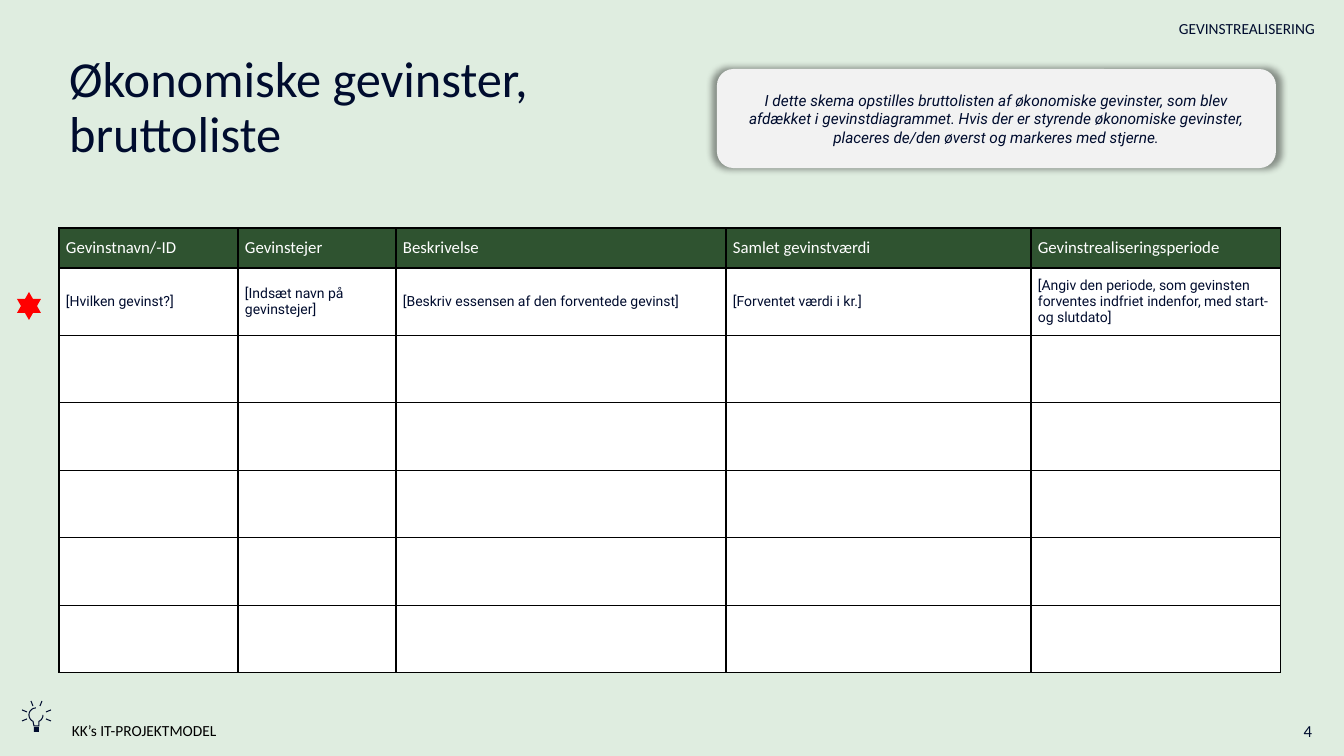
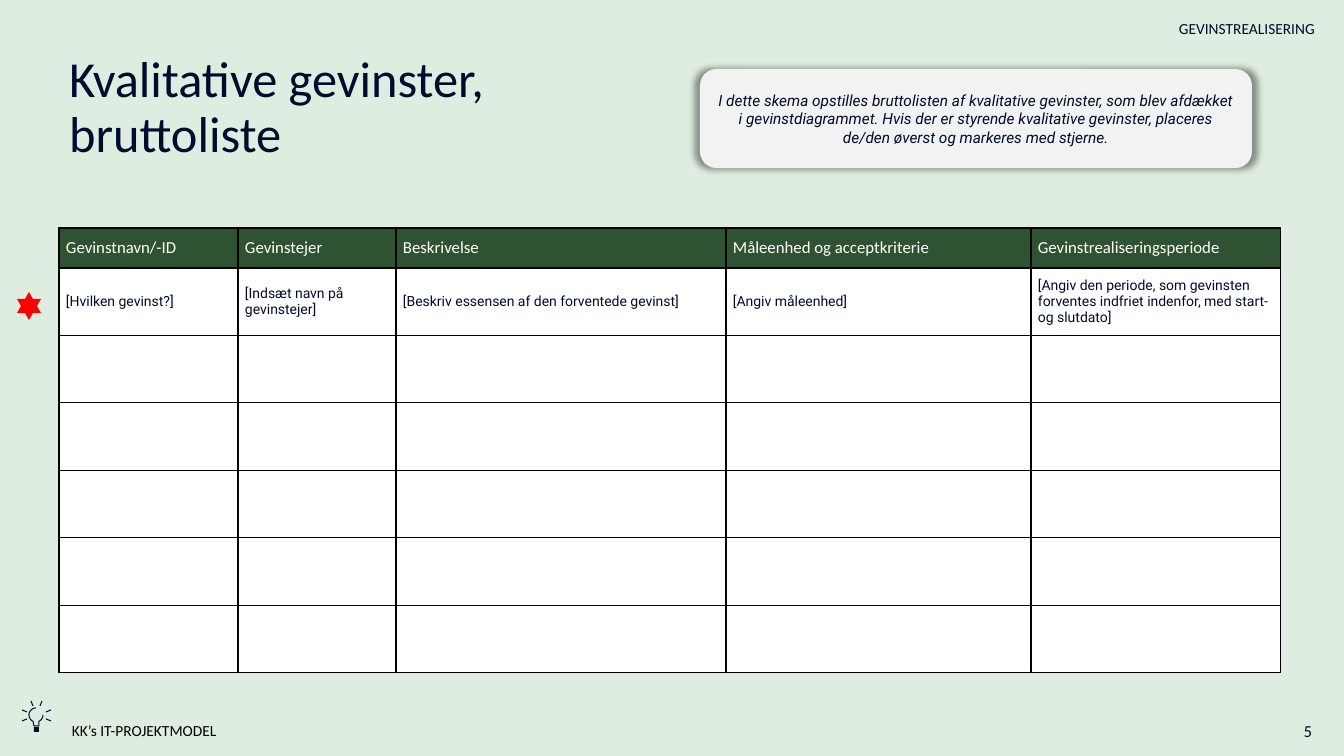
from math import cos, radians, sin

from lxml.etree import SubElement
from pptx import Presentation
from pptx.dml.color import RGBColor
from pptx.enum.shapes import MSO_SHAPE
from pptx.enum.text import MSO_ANCHOR, MSO_AUTO_SIZE, PP_ALIGN
from pptx.oxml import parse_xml
from pptx.oxml.ns import nsdecls, qn
from pptx.util import Pt

SLIDE_WIDTH, SLIDE_HEIGHT = 1344, 756
EMU_PER_PX = 12192000 / SLIDE_WIDTH

MINT = RGBColor(0xDF, 0xED, 0xE0)
NAVY = RGBColor(0x00, 0x0C, 0x2E)
BLACK = RGBColor(0x00, 0x00, 0x00)
WHITE = RGBColor(0xFF, 0xFF, 0xFF)
GREEN = RGBColor(0x2F, 0x53, 0x30)
LIGHT_GREY = RGBColor(0xF2, 0xF2, 0xF2)
RED = RGBColor(0xFF, 0x00, 0x00)
HEADING_FONT, BODY_FONT = "Calibri", "Roboto"

HEADER = "GEVINSTREALISERING"
FOOTER = "KK’s IT-PROJEKTMODEL"
SLIDES = [
    {
        "number": 4,
        "title": "Økonomiske gevinster,\vbruttoliste",
        "guide": "I dette skema opstilles bruttolisten af økonomiske gevinster, som blev "
                 "afdækket i gevinstdiagrammet. Hvis der er styrende økonomiske gevinster, "
                 "placeres de/den øverst og markeres med stjerne.",
        "guide_box": (717, 69, 559, 99),
        "measure": ("Samlet gevinstværdi", "[Forventet værdi i kr.]"),
    },
    {
        "number": 5,
        "title": "Kvalitative gevinster,\vbruttoliste",
        "guide": "I dette skema opstilles bruttolisten af kvalitative gevinster, som blev "
                 "afdækket i gevinstdiagrammet. Hvis der er styrende kvalitative gevinster, "
                 "placeres de/den øverst og markeres med stjerne.",
        "guide_box": (700, 69, 552, 99),
        "measure": ("Måleenhed og acceptkriterie", "[Angiv måleenhed]"),
    },
]
COLUMNS_BEFORE = [
    ("Gevinstnavn/-ID", "[Hvilken gevinst?]"),
    ("Gevinstejer", "[Indsæt navn på gevinstejer]"),
    ("Beskrivelse", "[Beskriv essensen af den forventede gevinst]"),
]
PERIOD_COLUMN = (
    "Gevinstrealiseringsperiode",
    "[Angiv den periode, som gevinsten forventes indfriet indenfor, med start- og slutdato]",
)
TABLE_LEFT, TABLE_TOP, TABLE_HEIGHT = 59, 228, 445
COLUMN_WIDTHS = [179, 158, 330, 305, 250]
HEADING_HEIGHT, BENEFIT_ROWS = 40, 6

BULB_CENTER, BULB_RADIUS = (36, 715), 7
BULB_NECK = [(39, 726), (34, 726)]
BULB_RAYS = [
    [(46, 712), (51, 710)], [(46, 719), (51, 721)],
    [(22, 710), (27, 712)], [(22, 721), (27, 719)],
    [(42, 701), (40, 706)], [(31, 701), (33, 706)],
]


def px(length):
    return round(length * EMU_PER_PX)


def box(*lengths):
    return [px(length) for length in lengths]


def format_text(frame, size, color, font=HEADING_FONT, align=PP_ALIGN.LEFT,
                anchor=MSO_ANCHOR.MIDDLE, italic=False):
    frame.word_wrap = True
    frame.vertical_anchor = anchor
    for paragraph in frame.paragraphs:
        paragraph.alignment = align
        for run in paragraph.runs:
            run.font.size = Pt(size)
            run.font.name = font
            run.font.italic = italic
            run.font.color.rgb = color


def add_label(slide, text, place, size, color, **style):
    frame = slide.shapes.add_textbox(*box(*place)).text_frame
    frame.text = text
    format_text(frame, size, color, **style)


def add_filled_shape(slide, kind, place, color):
    shape = slide.shapes.add_shape(kind, *box(*place))
    shape.shadow.inherit = False
    shape.fill.solid()
    shape.fill.fore_color.rgb = color
    shape.line.fill.background()
    return shape


def arc(start, end, step=5):
    center_x, center_y = BULB_CENTER
    return [(center_x + BULB_RADIUS * cos(radians(angle)),
             center_y + BULB_RADIUS * sin(radians(angle)))
            for angle in range(start, end + 1, step)]


def add_bulb(slide):
    glass = arc(0, 65) + BULB_NECK + arc(115, 270)
    builder = slide.shapes.build_freeform(*box(*glass[0]))
    builder.add_line_segments([box(*point) for point in glass[1:]], close=False)
    for start, end in BULB_RAYS:
        builder.move_to(*box(*start))
        builder.add_line_segments([box(*end)], close=False)
    bulb = builder.convert_to_shape()
    bulb.shadow.inherit = False
    bulb.fill.background()
    bulb.line.color.rgb = NAVY
    bulb.line.width = Pt(0.75)
    add_filled_shape(slide, MSO_SHAPE.RECTANGLE, (34, 727, 5, 5), NAVY)


def add_frame(slide, number):
    add_label(slide, HEADER, (985, 14, 340, 29), 11, NAVY,
              align=PP_ALIGN.RIGHT, anchor=MSO_ANCHOR.TOP)
    add_label(slide, FOOTER, (62, 716, 246, 29), 11, BLACK, anchor=MSO_ANCHOR.TOP)
    add_label(slide, str(number), (1020, 711, 302, 40), 12, NAVY, align=PP_ALIGN.RIGHT)
    add_bulb(slide)


def set_title(slide, text):
    title = slide.shapes.title
    title.left, title.top, title.width, title.height = box(59, 49, 1190, 119)
    title.text_frame.text = text
    title.text_frame.auto_size = MSO_AUTO_SIZE.NONE
    title.text_frame.paragraphs[0].line_spacing = 0.9
    format_text(title.text_frame, 36, NAVY)


def set_borders(cell):
    properties = cell._tc.get_or_add_tcPr()
    for index, side in enumerate(("lnL", "lnR", "lnT", "lnB")):
        properties.insert(index, parse_xml(
            f'<a:{side} {nsdecls("a")} w="{Pt(1)}"><a:solidFill>'
            f'<a:srgbClr val="{BLACK}"/></a:solidFill></a:{side}>'))


def add_benefit_table(slide, columns):
    place = (TABLE_LEFT, TABLE_TOP, sum(COLUMN_WIDTHS), TABLE_HEIGHT)
    table = slide.shapes.add_table(
        BENEFIT_ROWS + 1, len(columns), *box(*place)).table
    for column, width in zip(table.columns, COLUMN_WIDTHS):
        column.width = px(width)
    benefit_height = (TABLE_HEIGHT - HEADING_HEIGHT) / BENEFIT_ROWS
    for row_index, row in enumerate(table.rows):
        is_heading = row_index == 0
        row.height = px(HEADING_HEIGHT if is_heading else benefit_height)
        for cell, texts in zip(row.cells, columns):
            cell.margin_left = cell.margin_right = px(7)
            cell.margin_top = cell.margin_bottom = 0
            cell.vertical_anchor = MSO_ANCHOR.MIDDLE
            cell.fill.solid()
            cell.fill.fore_color.rgb = GREEN if is_heading else WHITE
            set_borders(cell)
            if row_index < len(texts):
                cell.text_frame.text = texts[row_index]
                if is_heading:
                    format_text(cell.text_frame, 12, WHITE)
                else:
                    format_text(cell.text_frame, 10, NAVY, font=BODY_FONT)


def add_glow_shadow(shape):
    effects = shape._element.spPr.find(qn("a:effectLst"))
    shadow = SubElement(effects, qn("a:outerShdw"), blurRad=str(Pt(5)),
                        sx="102000", sy="102000", algn="ctr", rotWithShape="0")
    color = SubElement(shadow, qn("a:srgbClr"), val=str(BLACK))
    SubElement(color, qn("a:alpha"), val="40000")


def add_guide(slide, text, place):
    guide = add_filled_shape(slide, MSO_SHAPE.ROUNDED_RECTANGLE, place, LIGHT_GREY)
    add_glow_shadow(guide)
    guide.text_frame.text = text
    format_text(guide.text_frame, 11, NAVY, font=BODY_FONT,
                align=PP_ALIGN.CENTER, italic=True)


def main():
    presentation = Presentation()
    presentation.slide_width, presentation.slide_height = box(SLIDE_WIDTH, SLIDE_HEIGHT)
    layout = presentation.slide_layouts.get_by_name("Title Only")
    layout.background.fill.solid()
    layout.background.fill.fore_color.rgb = MINT
    for content in SLIDES:
        slide = presentation.slides.add_slide(layout)
        add_frame(slide, content["number"])
        set_title(slide, content["title"])
        add_benefit_table(slide, COLUMNS_BEFORE + [content["measure"], PERIOD_COLUMN])
        add_guide(slide, content["guide"], content["guide_box"])
        add_filled_shape(slide, MSO_SHAPE.STAR_6_POINT, (17, 292, 24, 28), RED)
    presentation.save("out.pptx")


if __name__ == "__main__":
    main()
